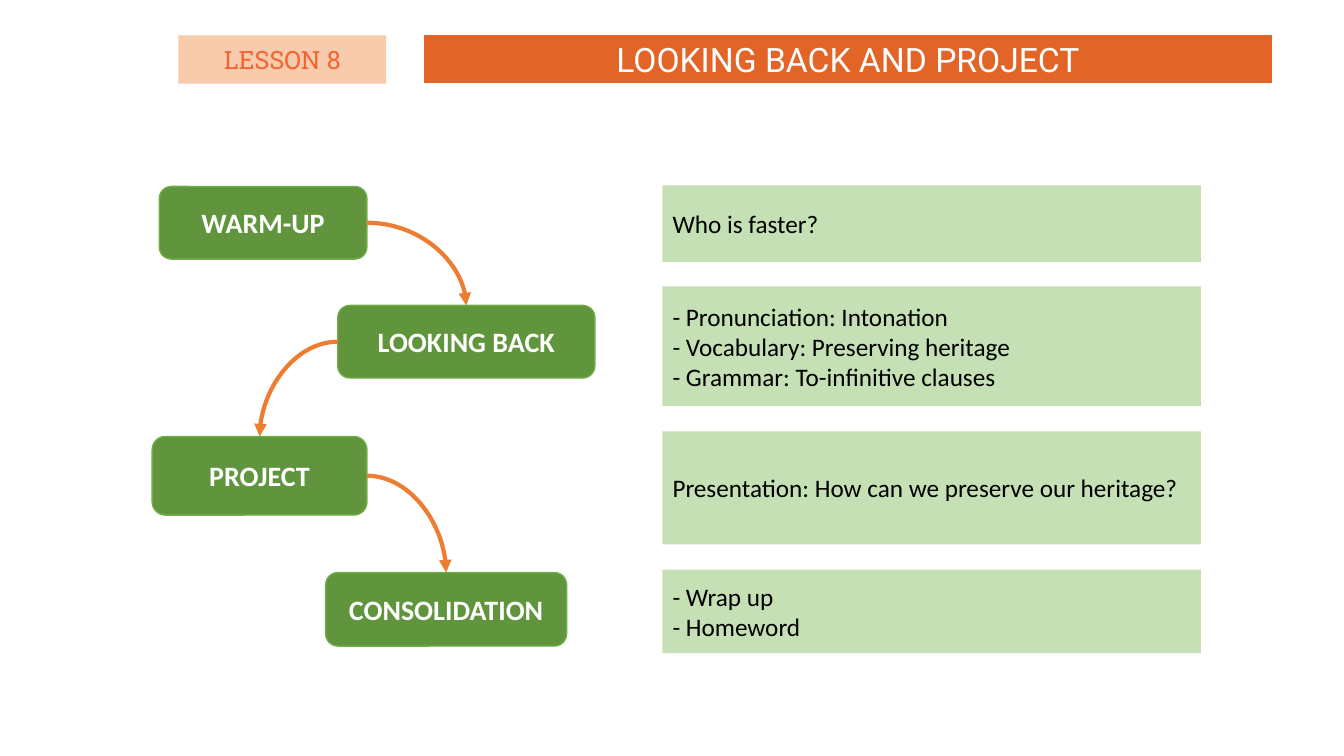
"""Build the lesson overview slide: a chain of stages beside their details."""
from dataclasses import dataclass
from typing import Any

from lxml.etree import SubElement
from pptx import Presentation
from pptx.dml.color import RGBColor
from pptx.enum.shapes import MSO_CONNECTOR, MSO_SHAPE
from pptx.enum.text import MSO_ANCHOR, MSO_AUTO_SIZE, PP_ALIGN
from pptx.oxml.ns import qn
from pptx.util import Pt

EMU_PER_PX = 9144
SLIDE_SIZE = (1333, 750)
COMPARISON_LAYOUT = 4
TOP_SITE, LEFT_SITE, RIGHT_SITE = 0, 1, 3


@dataclass(frozen=True)
class TextStyle:
    font: str
    size: int
    color: str
    alignment: PP_ALIGN = PP_ALIGN.CENTER
    bold: bool = False


@dataclass(frozen=True)
class BoxStyle:
    fill: str
    text: TextStyle
    line: str | None = None
    line_width: float = 1


@dataclass(frozen=True)
class Theme:
    title: BoxStyle = BoxStyle("E36427", TextStyle("Roboto", 24, "FFFFFF"), "FFFFFF", 1.5)
    lesson: BoxStyle = BoxStyle("F8CBAD", TextStyle("Roboto Slab", 18, "F26532"))
    stage: BoxStyle = BoxStyle("61953D", TextStyle("Calibri", 20, "FFFFFF", bold=True), "70AD47")
    detail: BoxStyle = BoxStyle("C5E0B4", TextStyle("Calibri", 18, "000000", PP_ALIGN.LEFT))
    arrow: str = "ED7D31"
    arrow_width: float = 3


@dataclass(frozen=True)
class Box:
    left: int
    top: int
    width: int
    height: int
    lines: tuple[str, ...]


THEME = Theme()
TITLE = Box(419, 34, 844, 49, ("LOOKING BACK AND PROJECT",))
LESSON = Box(177, 35, 206, 48, ("LESSON 8",))
STAGES = (
    Box(158, 185, 206, 72, ("WARM-UP",)),
    Box(335, 303, 255, 72, ("LOOKING BACK",)),
    Box(151, 433, 213, 78, ("PROJECT",)),
    Box(323, 568, 239, 73, ("CONSOLIDATION",)),
)
DETAIL_LEFT, DETAIL_WIDTH = 657, 534
DETAILS = tuple(
    Box(DETAIL_LEFT, top, DETAIL_WIDTH, height, lines)
    for top, height, lines in (
        (184, 76, ("Who is faster?",)),
        (284, 119, (
            "- Pronunciation: Intonation",
            "- Vocabulary: Preserving heritage",
            "- Grammar: To-infinitive clauses",
        )),
        (428, 112, ("Presentation: How can we preserve our heritage?",)),
        (565, 83, ("- Wrap up", "- Homeword")),
    )
)


def px(value: int) -> int:
    """Turn px into EMU."""
    return value * EMU_PER_PX


def apply(target: Any, values: dict[str, Any]) -> None:
    """Set each named attribute on the target."""
    for name, value in values.items():
        setattr(target, name, value)


def write_text(shape: Any, lines: tuple[str, ...], style: TextStyle) -> None:
    """Fill a shape with unbulleted, formatted paragraphs."""
    frame = shape.text_frame
    frame.text = "\n".join(lines)
    apply(frame, {
        "word_wrap": True,
        "auto_size": MSO_AUTO_SIZE.NONE,
        "vertical_anchor": MSO_ANCHOR.MIDDLE,
    })
    for paragraph in frame.paragraphs:
        apply(paragraph, {
            "alignment": style.alignment,
            "line_spacing": 1.0,
            "space_before": Pt(0),
            "space_after": Pt(0),
        })
        properties = paragraph._p.get_or_add_pPr()
        properties.set("marL", "0")
        properties.set("indent", "0")
        SubElement(properties, qn("a:buNone"))
        for run in paragraph.runs:
            apply(run.font, {"name": style.font, "size": Pt(style.size), "bold": style.bold})
            run.font.color.rgb = RGBColor.from_string(style.color)


def format_box(shape: Any, box: Box, style: BoxStyle) -> None:
    """Place, colour and fill in a shape or placeholder."""
    apply(shape, {name: px(getattr(box, name)) for name in ("left", "top", "width", "height")})
    shape.fill.solid()
    shape.fill.fore_color.rgb = RGBColor.from_string(style.fill)
    if style.line:
        shape.line.color.rgb = RGBColor.from_string(style.line)
        shape.line.width = Pt(style.line_width)
    else:
        shape.line.fill.background()
    write_text(shape, box.lines, style.text)


def add_box(slide: Any, kind: MSO_SHAPE, box: Box, style: BoxStyle) -> Any:
    """Add a preset shape without a shadow."""
    shape = slide.shapes.add_shape(kind, 0, 0, px(box.width), px(box.height))
    shape.shadow.inherit = False
    format_box(shape, box, style)
    return shape


def add_arrow(slide: Any, source: Any, target: Any) -> None:
    """Curve an arrow from the side of one stage to the top of the next."""
    goes_right = target.left > source.left
    connector = slide.shapes.add_connector(
        MSO_CONNECTOR.CURVE,
        source.left + source.width * goes_right,
        source.top + source.height // 2,
        target.left + target.width // 2,
        target.top,
    )
    connector.begin_connect(source, RIGHT_SITE if goes_right else LEFT_SITE)
    connector.end_connect(target, TOP_SITE)
    connector.line.color.rgb = RGBColor.from_string(THEME.arrow)
    connector.line.width = Pt(THEME.arrow_width)
    properties = connector._element.spPr
    properties.find(qn("a:prstGeom")).set("prst", "curvedConnector2")
    SubElement(properties.find(qn("a:ln")), qn("a:tailEnd"), type="triangle")
    SubElement(properties, qn("a:effectLst"))


def main() -> None:
    """Build and save the slide."""
    presentation = Presentation()
    width, height = SLIDE_SIZE
    apply(presentation, {"slide_width": px(width), "slide_height": px(height)})
    slide = presentation.slides.add_slide(presentation.slide_layouts[COMPARISON_LAYOUT])
    title, *bodies = slide.placeholders
    format_box(title, TITLE, THEME.title)
    for body, detail in zip(bodies, DETAILS):
        format_box(body, detail, THEME.detail)
    add_box(slide, MSO_SHAPE.RECTANGLE, LESSON, THEME.lesson)
    stages = [add_box(slide, MSO_SHAPE.ROUNDED_RECTANGLE, stage, THEME.stage) for stage in STAGES]
    for source, target in zip(stages, stages[1:]):
        add_arrow(slide, source, target)
    presentation.save("out.pptx")


if __name__ == "__main__":
    main()
